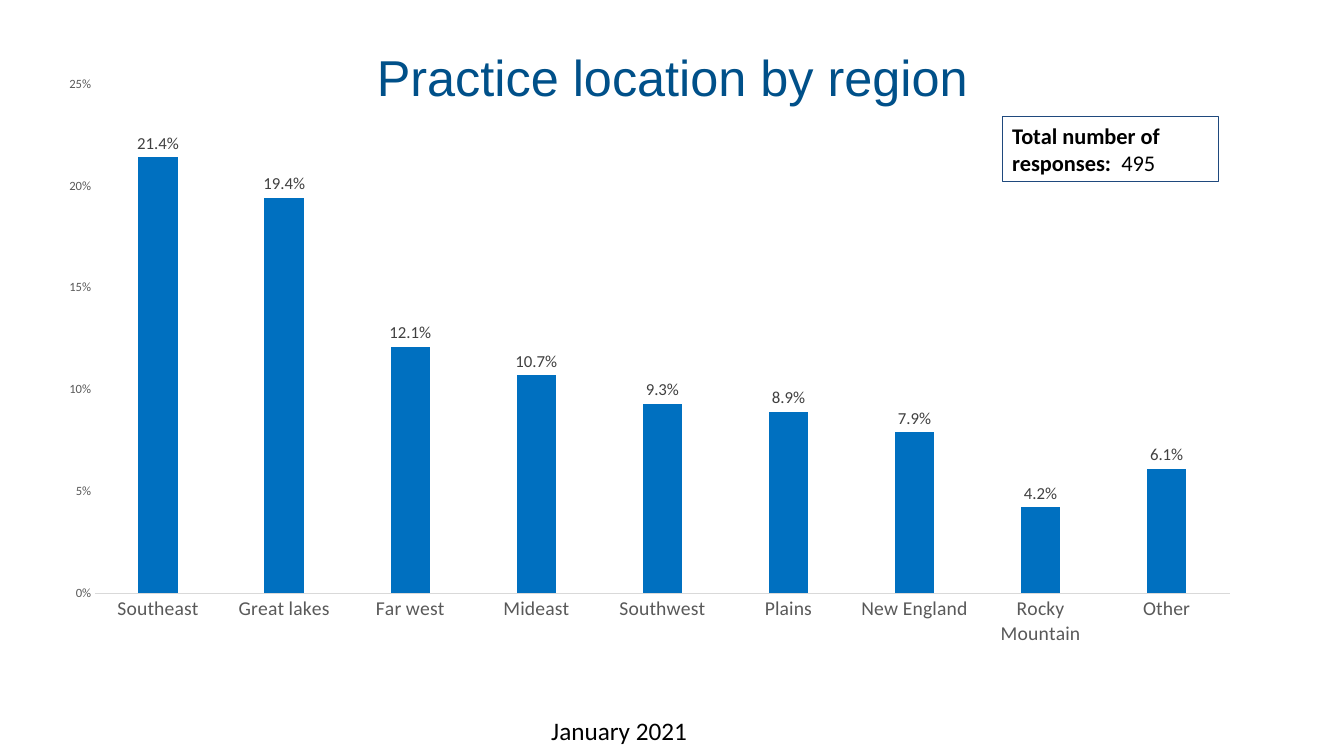
from lxml.etree import SubElement
from pptx import Presentation
from pptx.chart.data import CategoryChartData
from pptx.dml.color import RGBColor
from pptx.enum.chart import XL_CHART_TYPE, XL_LABEL_POSITION, XL_TICK_MARK
from pptx.enum.shapes import MSO_SHAPE
from pptx.enum.text import MSO_ANCHOR, PP_ALIGN
from pptx.oxml import parse_xml
from pptx.oxml.ns import nsdecls, qn
from pptx.util import Inches, Pt

NAVY = RGBColor(0x00, 0x50, 0x89)
BLUE = RGBColor(0x00, 0x70, 0xC0)
EDGE = RGBColor(0x1F, 0x49, 0x7D)
BLACK = RGBColor(0x00, 0x00, 0x00)
DARK = RGBColor(0x40, 0x40, 0x40)
GRAY = RGBColor(0x59, 0x59, 0x59)
PALE = RGBColor(0xD9, 0xD9, 0xD9)

REGIONS = {
    "Southeast": 0.214,
    "Great lakes": 0.194,
    "Far west": 0.121,
    "Mideast": 0.107,
    "Southwest": 0.093,
    "Plains": 0.089,
    "New England": 0.079,
    "Rocky Mountain": 0.042,
    "Other": 0.061,
}


def style(font, size, color, name="Calibri", bold=False):
    font.size = Pt(size)
    font.color.rgb = color
    font.name = name
    font.bold = bold


def write(frame, text, size=18, color=BLACK, name="Calibri", bold=False,
          align=PP_ALIGN.LEFT, anchor=MSO_ANCHOR.TOP):
    frame.word_wrap = True
    frame.vertical_anchor = anchor
    para = frame.paragraphs[0]
    para.alignment = align
    run = para.add_run()
    run.text = text
    style(run.font, size, color, name, bold)


class Deck:
    def __init__(self, width, height):
        self.show = Presentation()
        self.show.slide_width = Inches(width)
        self.show.slide_height = Inches(height)
        self.slide = self.show.slides.add_slide(self.show.slide_layouts[6])

    def place(self, left, top, width, height):
        col = self.show.slide_width / 100
        row = self.show.slide_height / 100
        return round(left * col), round(top * row), round(width * col), round(height * row)

    def text(self, area, words, **look):
        box = self.slide.shapes.add_textbox(*self.place(*area))
        write(box.text_frame, words, **look)

    def frame(self, area, label, value):
        box = self.slide.shapes.add_shape(MSO_SHAPE.RECTANGLE, *self.place(*area))
        box.shadow.inherit = False
        box.fill.background()
        box.line.color.rgb = EDGE
        box.line.width = Pt(0.75)
        write(box.text_frame, label, size=16, bold=True)
        write(box.text_frame, value, size=16)

    def columns(self, area, values):
        data = CategoryChartData(number_format="0.0%")
        data.categories = values.keys()
        data.add_series("Series 1", values.values())
        chart = self.slide.shapes.add_chart(
            XL_CHART_TYPE.COLUMN_CLUSTERED, *self.place(*area), data).chart
        chart.has_title = False
        chart.has_legend = False
        style(chart.font, 10, BLACK)

        plot = chart.plots[0]
        plot.gap_width = 219
        plot.overlap = -27
        plot.vary_by_categories = False
        fill = plot.series[0].format.fill
        fill.solid()
        fill.fore_color.rgb = BLUE

        plot.has_data_labels = True
        labels = plot.data_labels
        labels.show_value = True
        labels.number_format = "0.0%"
        labels.number_format_is_linked = False
        labels.position = XL_LABEL_POSITION.OUTSIDE_END
        style(labels.font, 12, DARK)

        for axis, size in ((chart.category_axis, 14), (chart.value_axis, 9)):
            axis.major_tick_mark = XL_TICK_MARK.NONE
            axis.minor_tick_mark = XL_TICK_MARK.NONE
            axis.has_major_gridlines = False
            style(axis.tick_labels.font, size, GRAY)
        line = chart.category_axis.format.line
        line.color.rgb = PALE
        line.width = Pt(0.75)

        scale = chart.value_axis
        scale.minimum_scale = 0
        scale.maximum_scale = 0.25
        scale.major_unit = 0.05
        scale.format.line.fill.background()
        scale.tick_labels.number_format = "0%"
        scale.tick_labels.number_format_is_linked = False
        self.clear(chart)

    def clear(self, chart):
        clean = f'<c:spPr {nsdecls("c", "a")}><a:noFill/><a:ln><a:noFill/></a:ln></c:spPr>'
        root = chart.element.find(qn("c:chart"))
        root.addnext(parse_xml(clean))
        area = root.find(qn("c:plotArea"))
        area.append(parse_xml(clean))
        for old in area.findall(qn("c:layout")):
            area.remove(old)
        layout = parse_xml(f'<c:layout {nsdecls("c")}><c:manualLayout/></c:layout>')
        area.insert(0, layout)
        rules = {"layoutTarget": "inner", "xMode": "edge", "yMode": "edge",
                 "x": "0.042", "y": "0.033", "w": "0.938", "h": "0.859"}
        for tag, value in rules.items():
            SubElement(layout[0], qn(f"c:{tag}")).set("val", value)


def main():
    deck = Deck(13.33, 7.5)
    deck.text((6.9, 0.4, 86.27, 19.33), "Practice location by region", size=36,
              color=NAVY, name="Arial", align=PP_ALIGN.CENTER, anchor=MSO_ANCHOR.MIDDLE)
    deck.frame((74.57, 15.47, 16.13, 8.53), "Total number of responses:  ", "495")
    deck.columns((3.3, 8.53, 90, 78.4), REGIONS)
    deck.text((40.28, 94, 31.66, 5.33), "January 2021")
    deck.show.save("out.pptx")


if __name__ == "__main__":
    main()
